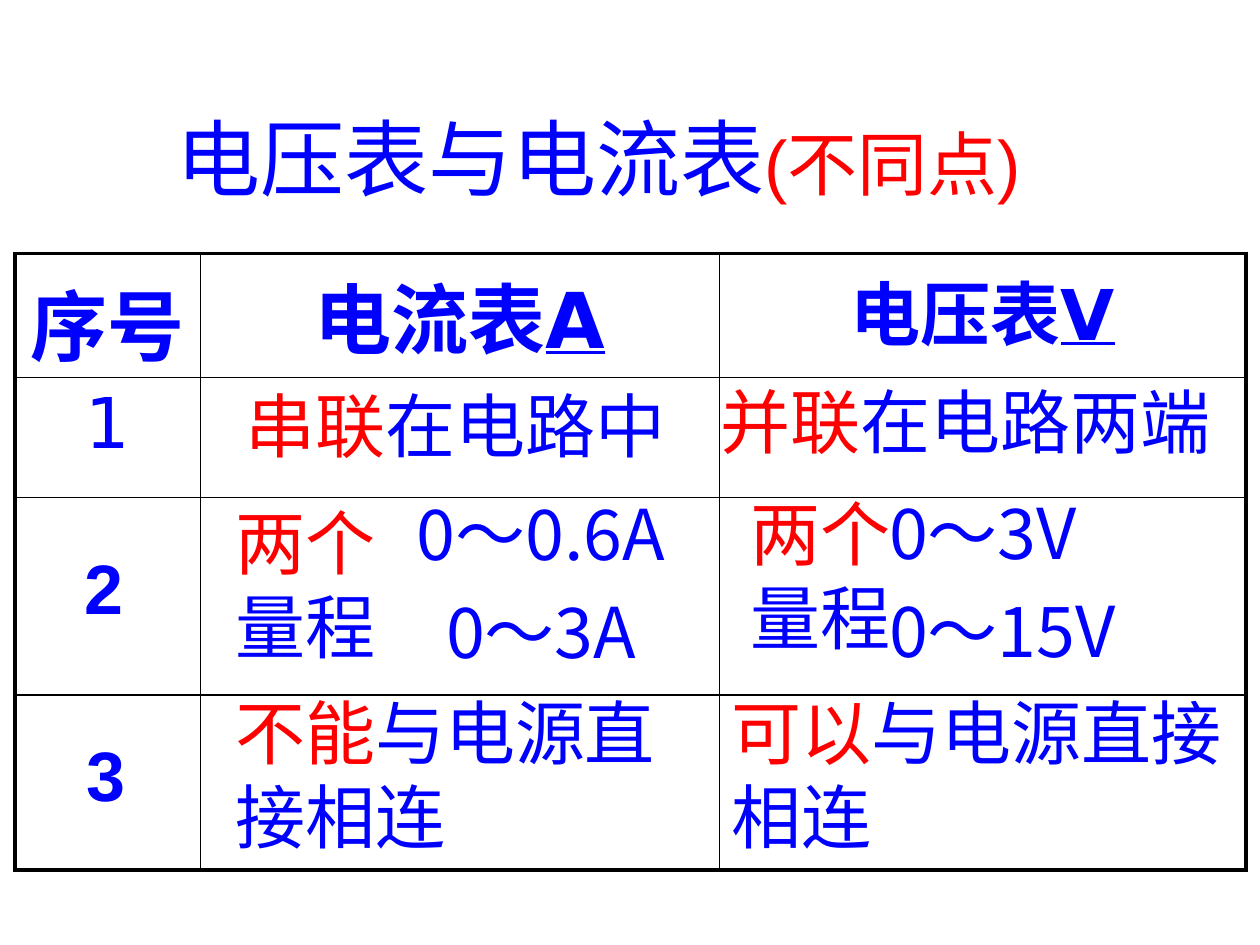
from dataclasses import dataclass
from typing import Any

from lxml.etree import SubElement
from pptx import Presentation
from pptx.dml.color import RGBColor
from pptx.enum.text import MSO_ANCHOR, MSO_AUTO_SIZE, PP_ALIGN
from pptx.oxml.ns import qn
from pptx.util import Pt

BLUE = RGBColor(0x00, 0x00, 0xFF)
RED = RGBColor(0xFF, 0x00, 0x00)
BLACK = RGBColor(0x00, 0x00, 0x00)
INNER_RULE, OUTER_RULE = Pt(1), Pt(2.25)
LINE_RATIO = 1.2


@dataclass(frozen=True)
class Phrase:
    text: str
    color: RGBColor = BLUE
    size: float = 40
    font: str = "Arial"
    bold: bool = False
    underline: bool = False


@dataclass(frozen=True)
class Note:
    left: float
    top: float
    width: float
    height: float
    lines: list[list[Phrase]]
    align: PP_ALIGN = PP_ALIGN.LEFT


@dataclass(frozen=True)
class Entry:
    row: int
    column: int
    phrases: list[Phrase]


def apply(target: Any, values: dict[str, Any]) -> None:
    for name, value in values.items():
        setattr(target, name, value)


def write_phrases(paragraph: Any, phrases: list[Phrase]) -> None:
    for phrase in phrases:
        run = paragraph.add_run()
        run.text = phrase.text
        apply(run.font, {"size": Pt(phrase.size), "name": phrase.font,
                         "bold": phrase.bold, "underline": phrase.underline})
        run.font.color.rgb = phrase.color


def fill_note(shape: Any, note: Note) -> None:
    apply(shape, {"left": Pt(note.left), "top": Pt(note.top),
                  "width": Pt(note.width), "height": Pt(note.height)})
    frame = shape.text_frame
    apply(frame, {"word_wrap": True, "auto_size": MSO_AUTO_SIZE.NONE,
                  "vertical_anchor": MSO_ANCHOR.TOP,
                  "margin_left": Pt(7.2), "margin_right": Pt(7.2),
                  "margin_top": Pt(6), "margin_bottom": Pt(0)})
    for index, phrases in enumerate(note.lines):
        paragraph = frame.add_paragraph() if index else frame.paragraphs[0]
        largest = max(phrase.size for phrase in phrases)
        apply(paragraph, {"alignment": note.align,
                          "line_spacing": Pt(largest * LINE_RATIO),
                          "space_before": Pt(8 if index else 0)})
        write_phrases(paragraph, phrases)


def draw_borders(cell: Any, widths: dict[str, int]) -> None:
    properties = cell._tc.get_or_add_tcPr()
    for position, (side, width) in enumerate(widths.items()):
        border = properties.makeelement(qn(f"a:{side}"), {"w": str(width)})
        properties.insert(position, border)
        fill = SubElement(border, qn("a:solidFill"))
        SubElement(fill, qn("a:srgbClr"), val=str(BLACK))


def draw_table(slide: Any, entries: list[Entry]) -> None:
    widths = [105.84, 296.64, 300.96]
    heights = [70.56, 68.4, 113.04, 100.08]
    table = slide.shapes.add_table(
        len(heights), len(widths), Pt(8.64), Pt(144.72),
        Pt(sum(widths)), Pt(sum(heights))).table
    apply(table, {"first_row": False, "horz_banding": False})
    for column, width in zip(table.columns, widths):
        column.width = Pt(width)
    for row, height in zip(table.rows, heights):
        row.height = Pt(height)
    last_row, last_column = len(heights) - 1, len(widths) - 1
    for row in range(len(heights)):
        for column in range(len(widths)):
            cell = table.cell(row, column)
            cell.fill.background()
            draw_borders(cell, {
                "lnL": OUTER_RULE if column == 0 else INNER_RULE,
                "lnR": OUTER_RULE if column == last_column else INNER_RULE,
                "lnT": OUTER_RULE if row == 0 else INNER_RULE,
                "lnB": OUTER_RULE if row == last_row else INNER_RULE})
    for entry in entries:
        paragraph = table.cell(entry.row, entry.column).text_frame.paragraphs[0]
        paragraph.alignment = PP_ALIGN.CENTER
        write_phrases(paragraph, entry.phrases)
    apply(table.cell(0, 0), {"vertical_anchor": MSO_ANCHOR.BOTTOM,
                             "margin_top": Pt(0), "margin_bottom": Pt(0)})


def heading(text: str, size: float, underline: bool = False) -> Phrase:
    return Phrase(text, BLUE, size, "DejaVu Sans", True, underline)


def ranges(*values: str) -> list[list[Phrase]]:
    return [[Phrase(value, font="Noto Sans CJK SC")] for value in values]


def contrast(key: str, rest: str) -> list[list[Phrase]]:
    return [[Phrase(key, RED), Phrase(rest)]]


TITLE = Note(93.6, 54.72, 563.76, 64.8,
             [[Phrase("电压表与电流表", size=48), Phrase("(不同点)", RED)]])

ENTRIES = [
    Entry(0, 0, [heading("序号", 44)]),
    Entry(0, 1, [heading("电流表", 44), heading("A", 44, True)]),
    Entry(0, 2, [heading("电压表", 40), heading("V", 40, True)]),
    Entry(1, 0, [Phrase("1", font="DejaVu Sans")]),
]

NOTES = [
    Note(404.64, 210.24, 315, 55.44, contrast("并联", "在电路两端")),
    Note(411.12, 388.08, 308, 102.96, contrast("可以", "与电源直接相连")),
    Note(127.44, 388.08, 277.92, 102.96, contrast("不能", "与电源直接相连")),
    Note(501, 273.6, 205, 113.04, ranges("0～3V", "0～15V")),
    Note(421.92, 274.32, 102.24, 102.96, contrast("两个", "量程")),
    Note(41.04, 305.28, 45.36, 55.44, [[Phrase("2", bold=True)]]),
    Note(42.48, 411.84, 45.36, 55.44, [[Phrase("3", bold=True)]]),
    Note(133.2, 212.4, 266.4, 55.44, contrast("串联", "在电路中")),
    Note(127.44, 279.36, 113.76, 102.96, contrast("两个", "量程")),
    Note(184.32, 274.32, 249.84, 113.04, ranges("0～0.6A", "0～3A"),
         PP_ALIGN.CENTER),
]


def main() -> None:
    presentation = Presentation()
    apply(presentation, {"slide_width": Pt(720), "slide_height": Pt(540)})
    slide = presentation.slides.add_slide(presentation.slide_layouts[5])
    fill_note(slide.shapes.title, TITLE)
    draw_table(slide, ENTRIES)
    for note in NOTES:
        box = slide.shapes.add_textbox(Pt(0), Pt(0), Pt(1), Pt(1))
        fill_note(box, note)
    presentation.save("out.pptx")


if __name__ == "__main__":
    main()
